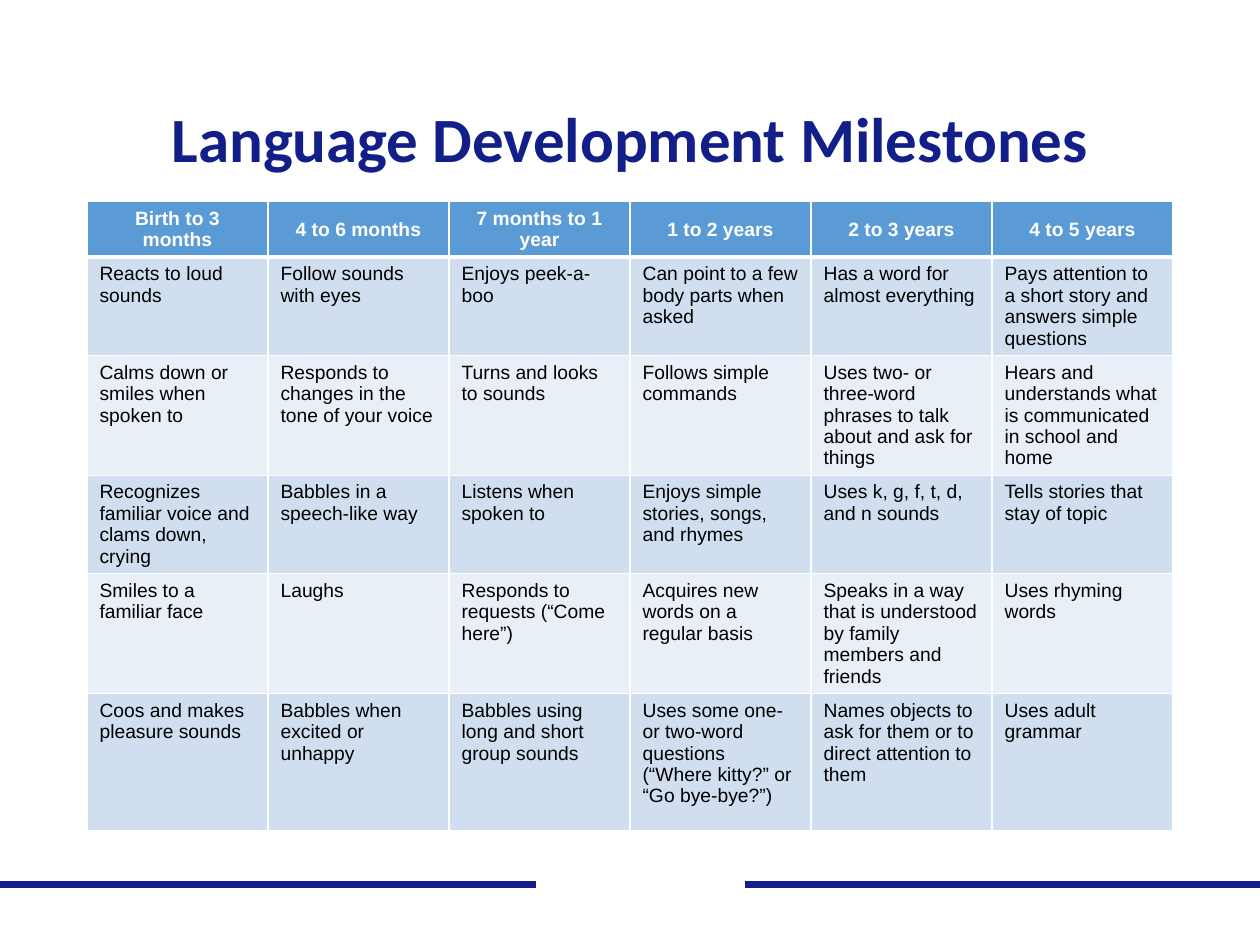
import dataclasses

import pptx
import pptx.dml.color
import pptx.enum.shapes
import pptx.enum.text
import pptx.oxml
import pptx.oxml.ns
import pptx.util

GRID_COLUMNS, GRID_ROWS = 100, 75
SIDE, CONTENT_WIDTH = 6.9, 86.2
RULE_ROW = 70.2
ROW_HEIGHTS = [4.2, 5.9, 9.2, 7.6, 9.2, 10.9]

MILESTONES = {
    "Birth to 3 months": [
        "Reacts to loud sounds",
        "Calms down or smiles when spoken to",
        "Recognizes familiar voice and clams down, crying",
        "Smiles to a familiar face",
        "Coos and makes pleasure sounds",
    ],
    "4 to 6 months": [
        "Follow sounds with eyes",
        "Responds to changes in the tone of your voice",
        "Babbles in a speech-like way",
        "Laughs",
        "Babbles when excited or unhappy",
    ],
    "7 months to 1 year": [
        "Enjoys peek-a-boo",
        "Turns and looks to sounds",
        "Listens when spoken to",
        "Responds to requests (“Come here”)",
        "Babbles using long and short group sounds",
    ],
    "1 to 2 years": [
        "Can point to a few body parts when asked",
        "Follows simple commands",
        "Enjoys simple stories, songs, and rhymes",
        "Acquires new words on a regular basis",
        "Uses some one- or two-word questions (“Where kitty?” or “Go bye-bye?”)",
    ],
    "2 to 3 years": [
        "Has a word for almost everything",
        "Uses two- or three-word phrases to talk about and ask for things",
        "Uses k, g, f, t, d, and n sounds",
        "Speaks in a way that is understood by family members and friends",
        "Names objects to ask for them or to direct attention to them",
    ],
    "4 to 5 years": [
        "Pays attention to a short story and answers simple questions",
        "Hears and understands what is communicated in school and home",
        "Tells stories that stay of topic",
        "Uses rhyming words",
        "Uses adult grammar",
    ],
}


@dataclasses.dataclass(frozen=True)
class Theme:
    navy: str = "121F88"
    white: str = "FFFFFF"
    black: str = "000000"
    header: str = "5B9BD5"
    bands: tuple = ("D0DEEF", "E9EFF7")
    title_font: str = "Calibri"
    body_font: str = "Arial"
    title_size: float = 36
    body_size: float = 11
    rule_width: float = 4.5
    border_width: float = 1
    header_border_width: float = 3


class SlideBuilder:
    """Places styled elements on one slide by grid columns and rows."""

    def __init__(self, presentation, theme):
        self.theme = theme
        self.column = presentation.slide_width / GRID_COLUMNS
        self.row = presentation.slide_height / GRID_ROWS
        self.slide = presentation.slides.add_slide(presentation.slide_layouts[5])

    def across(self, columns):
        return round(columns * self.column)

    def down(self, rows):
        return round(rows * self.row)

    def color(self, value):
        return pptx.dml.color.RGBColor.from_string(value)

    def add_text(self, paragraph, text, font, size, color, bold=False):
        run = paragraph.add_run()
        run.text = text
        run.font.name = font
        run.font.size = pptx.util.Pt(size)
        run.font.bold = bold
        run.font.color.rgb = self.color(color)

    def title(self, text, left, top, width, height):
        shape = self.slide.shapes.title
        shape.left, shape.top = self.across(left), self.down(top)
        shape.width, shape.height = self.across(width), self.down(height)
        frame = shape.text_frame
        frame.word_wrap = True
        frame.auto_size = pptx.enum.text.MSO_AUTO_SIZE.NONE
        frame.vertical_anchor = pptx.enum.text.MSO_ANCHOR.MIDDLE
        paragraph = frame.paragraphs[0]
        paragraph.alignment = pptx.enum.text.PP_ALIGN.CENTER
        paragraph.line_spacing = 0.9
        theme = self.theme
        self.add_text(paragraph, text, theme.title_font, theme.title_size, theme.navy, True)

    def rule(self, start, end, row, color):
        line = self.slide.shapes.add_connector(
            pptx.enum.shapes.MSO_CONNECTOR.STRAIGHT,
            self.across(start), self.down(row), self.across(end), self.down(row),
        )
        line.line.color.rgb = self.color(color)
        line.line.width = pptx.util.Pt(self.theme.rule_width)
        properties = line._element.spPr
        properties.append(pptx.oxml.parse_xml(f'<a:effectLst {pptx.oxml.ns.nsdecls("a")}/>'))

    def border(self, cell, side, width):
        cell._tc.get_or_add_tcPr().append(pptx.oxml.parse_xml(
            f'<a:{side} {pptx.oxml.ns.nsdecls("a")} w="{pptx.util.Pt(width)}">'
            f'<a:solidFill><a:srgbClr val="{self.theme.white}"/></a:solidFill></a:{side}>'
        ))

    def cell(self, cell, text, row_index):
        theme = self.theme
        is_header = row_index == 0
        widths = dict.fromkeys(("lnL", "lnR", "lnT", "lnB"), theme.border_width)
        if is_header:
            widths["lnB"] = theme.header_border_width
        elif row_index == 1:
            widths["lnT"] = theme.header_border_width
        for side, width in widths.items():
            self.border(cell, side, width)
        cell.fill.solid()
        fill = theme.header if is_header else theme.bands[(row_index - 1) % 2]
        cell.fill.fore_color.rgb = self.color(fill)
        paragraph = cell.text_frame.paragraphs[0]
        if is_header:
            cell.vertical_anchor = pptx.enum.text.MSO_ANCHOR.MIDDLE
            paragraph.alignment = pptx.enum.text.PP_ALIGN.CENTER
        color = theme.white if is_header else theme.black
        self.add_text(paragraph, text, theme.body_font, theme.body_size, color, is_header)

    def table(self, content, left, top, width, row_heights):
        table = self.slide.shapes.add_table(
            len(row_heights), len(content), self.across(left), self.down(top),
            self.across(width), self.down(sum(row_heights)),
        ).table
        for row, height in zip(table.rows, row_heights):
            row.height = self.down(height)
        for column_index, (heading, entries) in enumerate(content.items()):
            table.columns[column_index].width = self.across(width / len(content))
            for row_index, text in enumerate([heading, *entries]):
                self.cell(table.cell(row_index, column_index), text, row_index)


def main():
    presentation = pptx.Presentation()
    presentation.slide_width = pptx.util.Inches(10)
    presentation.slide_height = pptx.util.Inches(7.5)
    theme = Theme()
    builder = SlideBuilder(presentation, theme)
    builder.rule(0, GRID_COLUMNS, RULE_ROW, theme.navy)
    builder.rule(42.5, 59.1, RULE_ROW, theme.white)
    builder.title("Language Development Milestones", SIDE, 4, CONTENT_WIDTH, 14.5)
    builder.table(MILESTONES, SIDE, 16, CONTENT_WIDTH, ROW_HEIGHTS)
    presentation.save("out.pptx")


if __name__ == "__main__":
    main()
